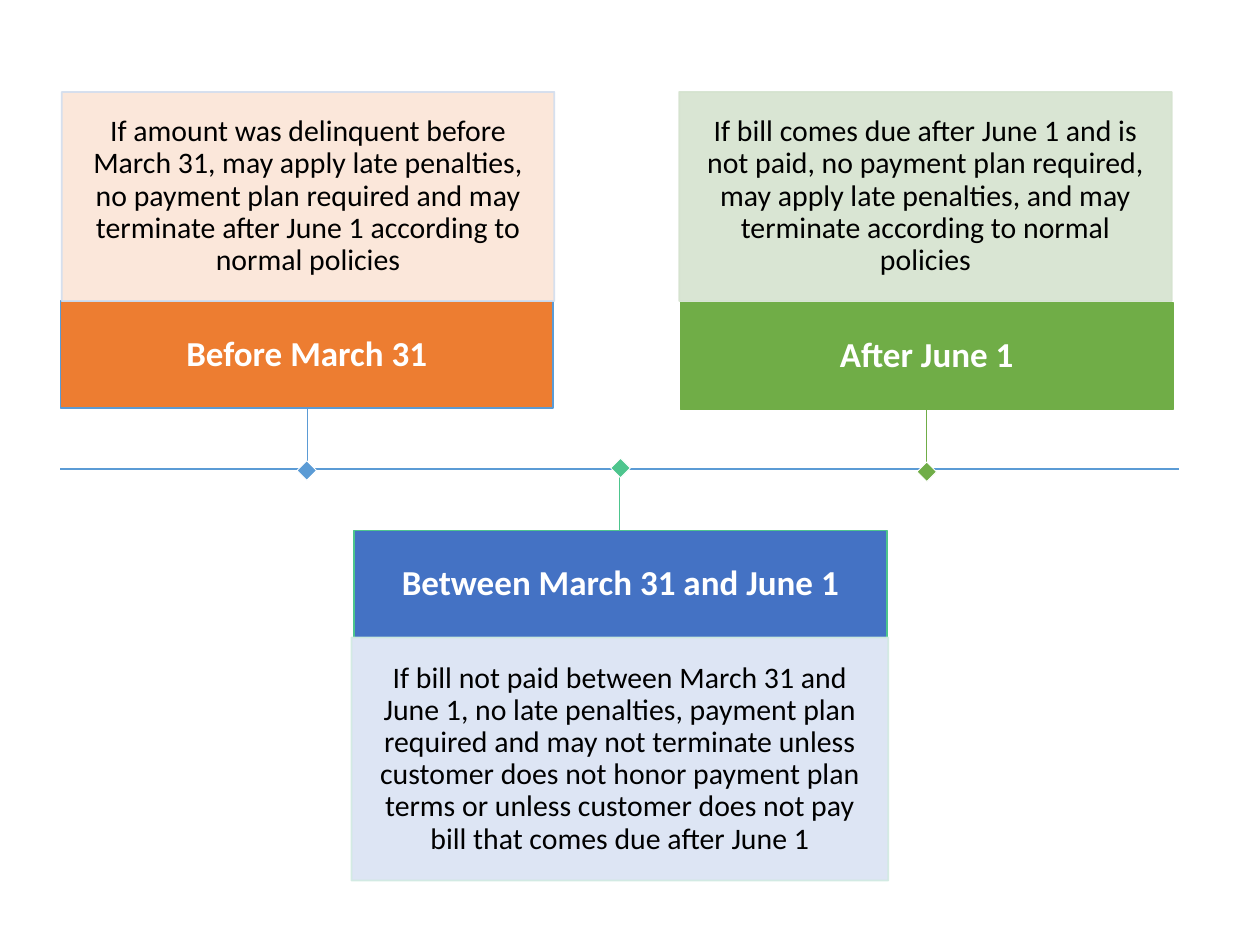
from dataclasses import dataclass

import lxml.etree
import pptx
import pptx.dml.color
import pptx.enum.shapes
import pptx.enum.text
import pptx.oxml.ns
import pptx.util

Inches = pptx.util.Inches
Pt = pptx.util.Pt
qn = pptx.oxml.ns.qn
Kind = pptx.enum.shapes.MSO_SHAPE
MARK = 0.11


@dataclass
class Box:
    left: float
    top: float
    width: float
    height: float
    fill: str
    line: str
    text: str


@dataclass
class Phase:
    head: Box
    note: Box
    stem: tuple[float, float, float]  # x, top, bottom
    dot: tuple[float, float]  # left, top
    tint: str


HEAD = {"size": Pt(20), "bold": True, "name": "Calibri"}
NOTE = {"size": Pt(17), "bold": False, "name": "Calibri"}

PHASES = [
    Phase(
        Box(0.48, 2.39, 3.91, 0.85, "ED7D31", "5B9BD5", "Before March 31"),
        Box(0.49, 0.73, 3.91, 1.66, "FBE5D6", "D2DEEF",
            "If amount was delinquent before March 31, may apply late penalties, "
            "no payment plan required and may terminate after June 1 "
            "according to normal policies"),
        (2.44, 3.24, 3.73), (2.38, 3.68), "5B9BD5"),
    Phase(
        Box(2.81, 4.21, 4.23, 0.85, "4472C4", "4DC58D",
            "Between March 31 and June 1"),
        Box(2.79, 5.06, 4.26, 1.93, "DAE3F3", "D0EAE1",
            "If bill not paid between March 31 and June 1, no late penalties, "
            "payment plan required and may not terminate unless customer does "
            "not honor payment plan terms or unless customer does not pay bill "
            "that comes due after June 1"),
        (4.92, 3.72, 4.21), (4.87, 3.66), "4DC58D"),
    Phase(
        Box(5.4, 2.4, 3.91, 0.85, "70AD47", "70AD47", "After June 1"),
        Box(5.39, 0.73, 3.91, 1.66, "D5E3CF", "D5E3CF",
            "If bill comes due after June 1 and is not paid, no payment plan "
            "required, may apply late penalties, and may terminate according "
            "to normal policies"),
        (7.35, 3.25, 3.74), (7.3, 3.69), "70AD47"),
]


def paint(part, code: str) -> None:
    """Set a colour format from a hex string."""
    part.rgb = pptx.dml.color.RGBColor.from_string(code)


def add_rect(shapes, left: float, top: float, width: float, height: float,
             fill: str, line: str, weight: float):
    rect = shapes.add_shape(Kind.RECTANGLE, Inches(left), Inches(top),
                            Inches(width), Inches(height))
    rect.shadow.inherit = False
    rect.fill.solid()
    paint(rect.fill.fore_color, fill)
    paint(rect.line.color, line)
    rect.line.width = Pt(weight)
    return rect


def add_line(shapes, x1: float, y1: float, x2: float, y2: float,
             code: str, weight: float) -> None:
    line = shapes.add_connector(pptx.enum.shapes.MSO_CONNECTOR.STRAIGHT,
                                Inches(x1), Inches(y1), Inches(x2), Inches(y2))
    paint(line.line.color, code)
    line.line.width = Pt(weight)
    props = line.element.find(qn("p:spPr"))
    lxml.etree.SubElement(props, qn("a:effectLst"))


def add_box(shapes, box: Box, font: dict, ink: str, inset: float):
    rect = add_rect(shapes, box.left, box.top, box.width, box.height,
                    box.fill, box.line, 1)
    frame = rect.text_frame
    edge = Inches(inset)
    look = {"word_wrap": True,
            "vertical_anchor": pptx.enum.text.MSO_ANCHOR.MIDDLE,
            "margin_left": edge, "margin_right": edge,
            "margin_top": edge, "margin_bottom": edge}
    for key, value in look.items():
        setattr(frame, key, value)
    para = frame.paragraphs[0]
    para.alignment = pptx.enum.text.PP_ALIGN.CENTER
    para.line_spacing = 0.9
    run = para.add_run()
    run.text = box.text
    for key, value in font.items():
        setattr(run.font, key, value)
    paint(run.font.color, ink)
    return rect


def fade(rect) -> None:
    """Make fill and line 90 % opaque."""
    props = rect.element.find(qn("p:spPr"))
    for code in props.iter(qn("a:srgbClr")):
        lxml.etree.SubElement(code, qn("a:alpha"), val="90000")


def main() -> None:
    deck = pptx.Presentation()
    deck.slide_width, deck.slide_height = Inches(10), Inches(7.5)
    shapes = deck.slides.add_slide(deck.slide_layouts[6]).shapes
    add_line(shapes, 0.48, 3.72, 9.36, 3.72, "5B9BD5", 1)
    for phase in PHASES:
        add_box(shapes, phase.head, HEAD, "FFFFFF", 0.11)
        fade(add_box(shapes, phase.note, NOTE, "000000", 0.18))
        x, top, bottom = phase.stem
        add_line(shapes, x, top, x, bottom, phase.tint, 0.5)
        dot = add_rect(shapes, *phase.dot, MARK, MARK,
                       phase.tint, "FFFFFF", 0.5)
        dot.rotation = 45
    deck.save("out.pptx")


if __name__ == "__main__":
    main()
